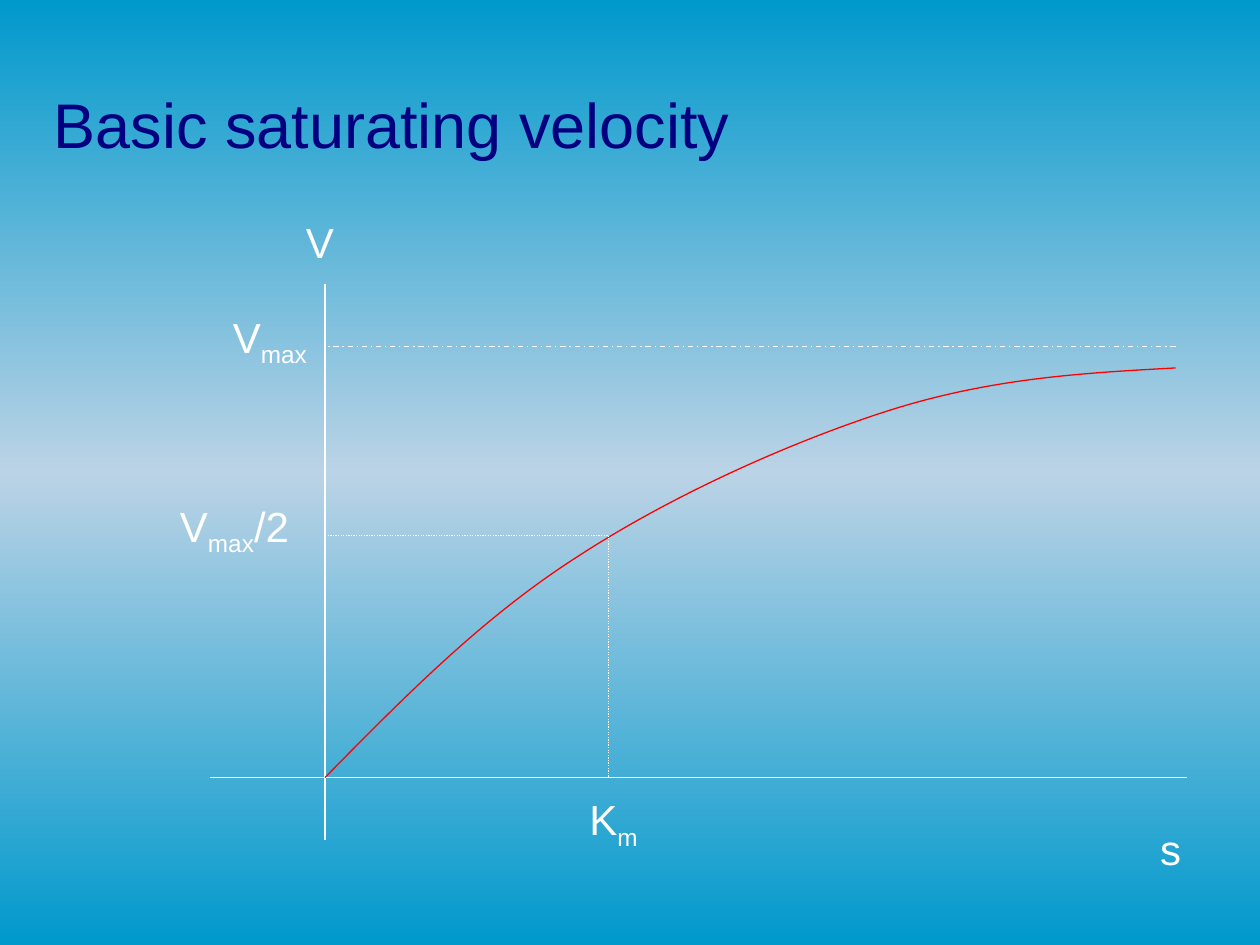
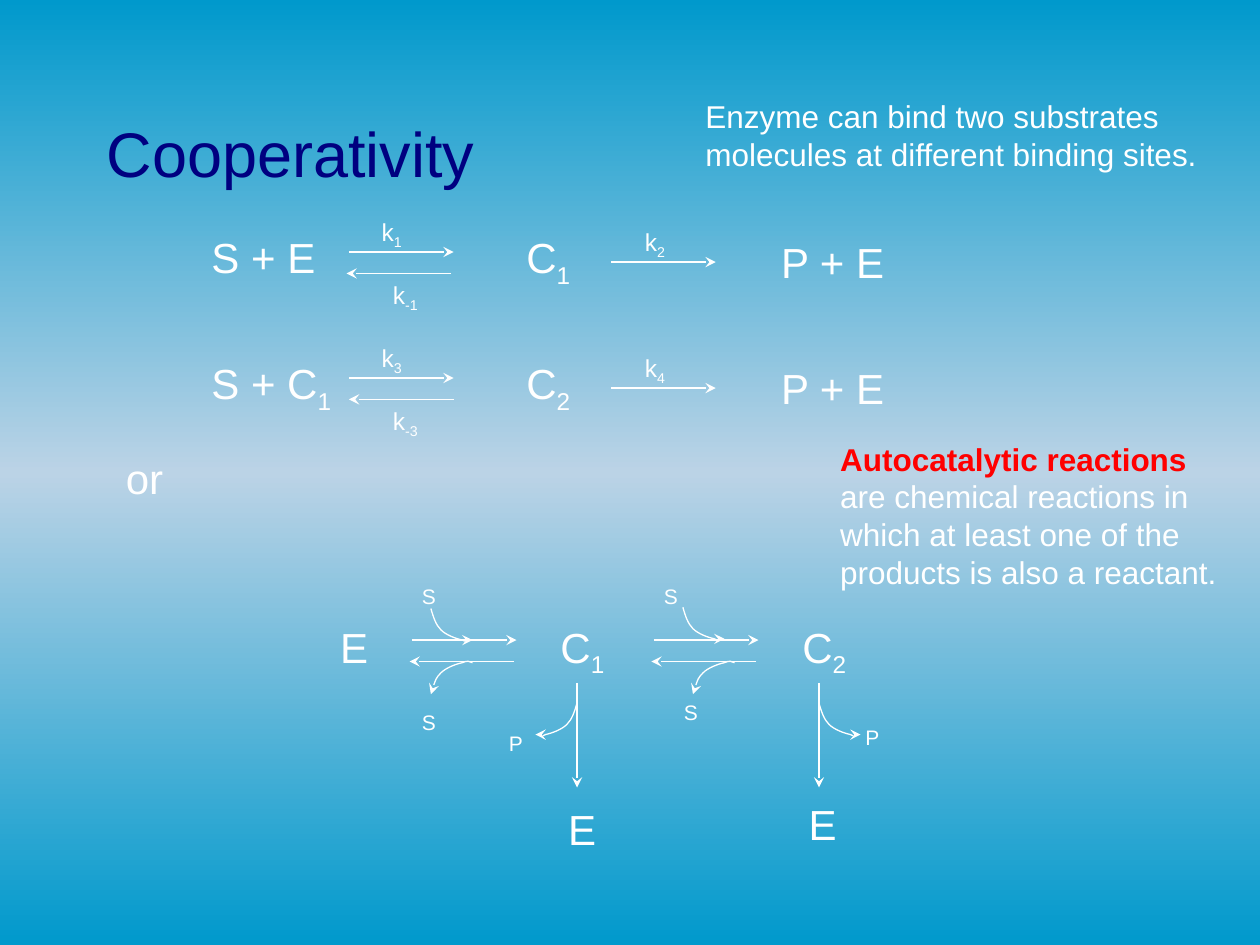
from lxml import etree
from pptx import Presentation
from pptx.dml.color import RGBColor
from pptx.enum.dml import MSO_LINE
from pptx.enum.shapes import MSO_CONNECTOR
from pptx.enum.text import MSO_ANCHOR, MSO_AUTO_SIZE
from pptx.oxml.ns import qn
from pptx.util import Inches, Pt

STRAIGHT = MSO_CONNECTOR.STRAIGHT
DASH_DOT, DOTTED = MSO_LINE.DASH_DOT, MSO_LINE.ROUND_DOT
MIDDLE, GROW = MSO_ANCHOR.MIDDLE, MSO_AUTO_SIZE.SHAPE_TO_FIT_TEXT

FONT = "Arial"
COLORS = {"sky": "0099CC", "title": "000080", "ink": "FFFFFF", "accent": "FF0000"}
SKY_STOPS = [(0, None), (50000, "50980"), (100000, None)]
LINE_HEIGHT = {12: 0.3, 14: 0.34, 24: 0.5}

VELOCITY_TITLE = ("Basic saturating velocity", (0.33, 0.25, 9.31, 1.45))
ORIGIN_X, ORIGIN_Y = 2.58, 6.17
HALF_X, HALF_Y = 4.83, 4.25
END_X, MAX_Y = 9.33, 2.75
AXES = [(ORIGIN_X, 2.25, ORIGIN_X, 6.67), (1.67, ORIGIN_Y, 9.42, ORIGIN_Y)]
GUIDES = [
    ((END_X, MAX_Y, ORIGIN_X, MAX_Y), DASH_DOT),
    ((ORIGIN_X, HALF_Y, HALF_X, HALF_Y), DOTTED),
    ((HALF_X, HALF_Y, HALF_X, ORIGIN_Y), DOTTED),
]
SATURATION_CURVE = [
    (ORIGIN_X, ORIGIN_Y), (3.21, 5.53), (3.83, 4.9), (4.58, 4.42), (5.33, 3.93),
    (6.29, 3.5), (7.08, 3.25), (7.88, 3), (8.6, 2.96), (END_X, 2.92),
]
AXIS_LABELS = [
    ("s", 9.11, 6.49, 0.37), ("V", 2.33, 1.67, 0.42), ("V_max", 1.75, 2.42, 0.84),
    ("K_m", 4.58, 6.25, 0.61), ("V_max_/2", 1.33, 3.92, 1.12),
]

COOPERATIVITY_TITLE = ("Cooperativity", (0.75, 0.58, 8.5, 1.25))
BINDING_NOTE = ("Enzyme can bind two substrates molecules at different binding sites.",
                (5.5, 0.72, 4.25, 0.7))
AUTOCATALYTIC_LEAD = "Autocatalytic reactions"
AUTOCATALYTIC_NOTE = (" are chemical reactions in which at least one of the products "
                      "is also a reactant.", (6.57, 3.44, 3.23, 1.31))
REACTIONS = [
    {"reactants": ("S + E", 1.12), "complex": "C_1", "rates": ("k_1", "k_-1", "k_2"),
     "back": 2.75},
    {"reactants": ("S + C_1", 1.26), "complex": "C_2", "rates": ("k_3", "k_-3", "k_4"),
     "back": 2.77},
]
FIRST_ROW, ROW_STEP = 1.79, 1
STEP_LENGTH, ARROW_GAP = 0.83, 0.17
STATES = [
    ("or", 0.9, 3.54, 0.5), ("E", 2.6, 4.88, 0.42), ("C_1", 4.35, 4.88, 0.57),
    ("C_2", 6.27, 4.88, 0.57), ("E", 4.41, 6.33, 0.42), ("E", 6.32, 6.29, 0.42),
]
SIDE_SPECIES = [
    ("S", 3.25, 4.58), ("S", 5.17, 4.58), ("S", 3.25, 5.58), ("S", 5.33, 5.5),
    ("P", 3.94, 5.75), ("P", 6.77, 5.7),
]
BINDING_STEPS = [3.25, 5.17]
RELEASE_STEPS = [4.58, 6.5]
HOOK = [
    (0, 0), (0.02, 0.07), (0.04, 0.13), (0.08, 0.17), (0.12, 0.21),
    (0.2, 0.24), (0.25, 0.25), (0.29, 0.27), (0.31, 0.26), (0.33, 0.25),
]
HOOKS = [
    (3.42, 4.83, 1, 1, "tailEnd"), (5.42, 4.82, 1, 1, "tailEnd"),
    (3.42, 5.51, 1, -1, "headEnd"), (5.5, 5.51, 1, -1, "headEnd"),
    (4.58, 5.58, -1, 1, "tailEnd"), (6.5, 5.58, 1, 1, "tailEnd"),
]


def add_page(deck):
    page = deck.slides.add_slide(deck.slide_layouts[6])
    fill = page.background.fill
    fill.gradient()
    fill.gradient_angle = 270
    stops = page.element.find(".//" + qn("a:gsLst"))
    for stop in list(stops):
        stops.remove(stop)
    for position, tint in SKY_STOPS:
        stop = etree.SubElement(stops, qn("a:gs"), pos=str(position))
        color = etree.SubElement(stop, qn("a:srgbClr"), val=COLORS["sky"])
        if tint:
            etree.SubElement(color, qn("a:tint"), val=tint)
    return page


def write(page, text, at, size=24, color="ink", lead="", wrap=False, anchor=None):
    box = page.shapes.add_textbox(*map(Inches, at))
    frame = box.text_frame
    frame.word_wrap = wrap
    if anchor is None:
        frame.auto_size = GROW
    else:
        frame.vertical_anchor = anchor
    para = frame.paragraphs[0]
    parts = [(lead, "accent", False)] if lead else []
    parts += [(part, color, index % 2 == 1) for index, part in enumerate(text.split("_"))]
    for part, part_color, lowered in parts:
        if not part:
            continue
        span = para.add_run()
        span.text = part
        span.font.name = FONT
        span.font.size = Pt(size)
        span.font.bold = part_color == "accent"
        span.font.color.rgb = RGBColor.from_string(COLORS[part_color])
        if lowered:
            span.font._element.set("baseline", "-25000")


def label(page, text, left, top, width, size=24):
    write(page, text, (left, top, width, LINE_HEIGHT[size]), size=size)


def add_title(page, title):
    text, at = title
    write(page, text, at, size=36, color="title", wrap=True, anchor=MIDDLE)


def style_line(shape, color="ink", dash=None, arrow=None):
    shape.line.color.rgb = RGBColor.from_string(COLORS[color])
    shape.line.width = Pt(0.75)
    if dash is not None:
        shape.line.dash_style = dash
    properties = shape._element.spPr
    if arrow:
        etree.SubElement(properties.find(qn("a:ln")), qn("a:" + arrow), type="stealth")
    etree.SubElement(properties, qn("a:effectLst"))


def draw_line(page, ends, **style):
    style_line(page.shapes.add_connector(STRAIGHT, *map(Inches, ends)), **style)


def draw_curve(page, points, **style):
    start, *controls = [(Inches(x), Inches(y)) for x, y in points]
    builder = page.shapes.build_freeform(*start)
    builder.add_line_segments(controls, close=False)
    curve = builder.convert_to_shape()
    curve.fill.background()
    outline = curve._element.find(".//" + qn("a:path"))
    segments = outline.findall(qn("a:lnTo"))
    for first in range(0, len(segments), 3):
        bezier = etree.SubElement(outline, qn("a:cubicBezTo"))
        for segment in segments[first:first + 3]:
            bezier.append(segment[0])
            outline.remove(segment)
    style_line(curve, **style)


def draw_step(page, left, top):
    draw_line(page, (left, top, left + STEP_LENGTH, top), arrow="tailEnd")


def draw_back_step(page, left, top):
    draw_line(page, (left + STEP_LENGTH, top, left, top), arrow="tailEnd")


def build_velocity(deck):
    page = add_page(deck)
    add_title(page, VELOCITY_TITLE)
    for ends in AXES:
        draw_line(page, ends)
    draw_curve(page, SATURATION_CURVE, color="accent")
    for ends, dash in GUIDES:
        draw_line(page, ends, dash=dash)
    for axis_label in AXIS_LABELS:
        label(page, *axis_label)


def build_reaction(page, reaction, top):
    reactants, width = reaction["reactants"]
    forward, backward, product = reaction["rates"]
    label(page, reactants, 1.58, top, width)
    label(page, reaction["complex"], 4.08, top, 0.57)
    label(page, "P + E", 6.1, top + 0.04, 1.02)
    label(page, forward, 2.93, top - 0.12, 0.37, size=14)
    label(page, backward, 3.02, top + 0.38, 0.42, size=14)
    label(page, product, 5.02, top - 0.04, 0.37, size=14)
    draw_step(page, 2.77, top + 0.21)
    draw_back_step(page, reaction["back"], top + 0.21 + ARROW_GAP)
    draw_step(page, 4.85, top + 0.29)


def build_cooperativity(deck):
    page = add_page(deck)
    add_title(page, COOPERATIVITY_TITLE)
    for row, reaction in enumerate(REACTIONS):
        build_reaction(page, reaction, FIRST_ROW + row * ROW_STEP)
    write(page, *BINDING_NOTE, size=18, wrap=True)
    for state in STATES:
        label(page, *state)
    for left in BINDING_STEPS:
        draw_step(page, left + 0.02, 5.08)
        draw_back_step(page, left, 5.08 + ARROW_GAP)
    for left in RELEASE_STEPS:
        draw_line(page, (left, 5.42, left, 5.42 + STEP_LENGTH), arrow="tailEnd")
    for text, left, top in SIDE_SPECIES:
        label(page, text, left, top, 0.31, size=12)
    for left, top, across, down, arrow in HOOKS:
        points = [(left + across * x, top + down * y) for x, y in HOOK]
        draw_curve(page, points, arrow=arrow)
    write(page, *AUTOCATALYTIC_NOTE, size=18, lead=AUTOCATALYTIC_LEAD, wrap=True)


def main():
    deck = Presentation()
    deck.slide_width, deck.slide_height = Inches(10), Inches(7.5)
    build_velocity(deck)
    build_cooperativity(deck)
    deck.save("out.pptx")


if __name__ == "__main__":
    main()
